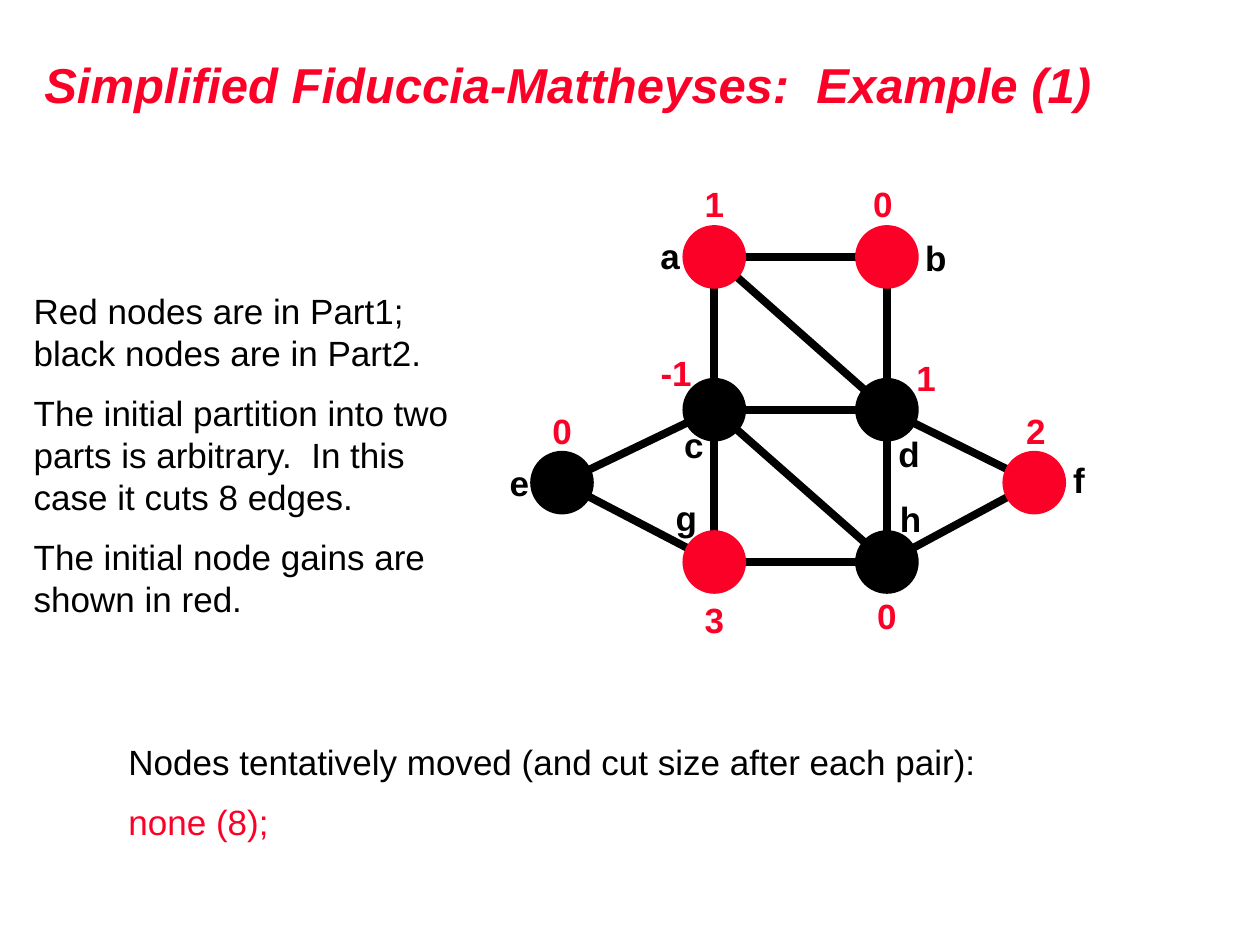
from math import hypot

from lxml.etree import SubElement
from pptx import Presentation
from pptx.dml.color import RGBColor
from pptx.enum.shapes import MSO_CONNECTOR, MSO_SHAPE
from pptx.enum.text import MSO_ANCHOR, MSO_AUTO_SIZE, PP_ALIGN
from pptx.oxml.ns import qn
from pptx.util import Cm, Pt

COLORS = {"red": "FC0128", "black": "000000"}
FONT = "Arial"
DIAMETER = 1.07
EDGE_GAP = 0.56
LABEL_WIDTH, LABEL_HEIGHT = 0.92, 1.09
EXTRA_CHARACTER_WIDTH = 0.25

NODES = {
    "a": ((4.4, 1.68), "red", (-0.89, -0.04), "1", (0, -1.08)),
    "b": ((7.88, 1.68), "red", (0.98, 0), "0", (-0.08, -1.08)),
    "c": ((4.4, 4.76), "black", (-0.41, 0.7), "-1", (-0.77, -0.75)),
    "d": ((7.88, 4.76), "black", (0.44, 0.88), "1", (0.79, -0.65)),
    "e": ((1.33, 6.23), "black", (-0.86, 0), "0", (0, -1.05)),
    "f": ((10.85, 6.23), "red", (0.9, -0.06), "2", (0.03, -1.05)),
    "g": ((4.4, 7.83), "red", (-0.57, -0.9), "3", (0, 1.16)),
    "h": ((7.88, 7.83), "black", (0.47, -0.88), "0", (0, 1.08)),
}
EDGES = ["ec", "hf", "eg", "gh", "cd", "ab", "df", "ac", "bd", "cg", "dh", "ch", "ad"]


def rgb(color):
    return RGBColor.from_string(COLORS[color])


def style(paragraph, size, color, bold=False, italic=False):
    for run in paragraph.runs:
        run.font.name = FONT
        run.font.size = Pt(size)
        run.font.bold = bold
        run.font.italic = italic
        run.font.color.rgb = rgb(color)


def add_heading(slide, box, text):
    heading = slide.shapes.title
    heading.left, heading.top, heading.width, heading.height = map(Cm, box)
    heading.text_frame.text = text
    heading.text_frame.vertical_anchor = MSO_ANCHOR.MIDDLE
    paragraph = heading.text_frame.paragraphs[0]
    paragraph.alignment = PP_ALIGN.LEFT
    style(paragraph, 28, "red", bold=True, italic=True)


def add_remarks(slide, box, remarks):
    frame = slide.shapes.add_textbox(*map(Cm, box)).text_frame
    frame.word_wrap = True
    for index, (text, color) in enumerate(remarks):
        paragraph = frame.add_paragraph() if index else frame.paragraphs[0]
        paragraph.text = text
        if index:
            paragraph.space_before = Pt(10)
        style(paragraph, 20, color)


def add_edge(slide, start, end):
    (x1, y1), (x2, y2) = start, end
    length = hypot(x2 - x1, y2 - y1)
    dx, dy = (x2 - x1) / length * EDGE_GAP, (y2 - y1) / length * EDGE_GAP
    edge = slide.shapes.add_connector(
        MSO_CONNECTOR.STRAIGHT, Cm(x1 + dx), Cm(y1 + dy), Cm(x2 - dx), Cm(y2 - dy))
    edge.line.color.rgb = rgb("black")
    edge.line.width = Pt(4.5)
    SubElement(edge._element.spPr, qn("a:effectLst"))


def add_node(slide, center, color):
    x, y = center
    node = slide.shapes.add_shape(
        MSO_SHAPE.OVAL, Cm(x - DIAMETER / 2), Cm(y - DIAMETER / 2),
        Cm(DIAMETER), Cm(DIAMETER))
    node.shadow.inherit = False
    node.fill.solid()
    node.fill.fore_color.rgb = rgb(color)
    node.line.color.rgb = rgb(color)
    node.line.width = Pt(6)


def add_label(slide, center, offset, text, color):
    width = LABEL_WIDTH + EXTRA_CHARACTER_WIDTH * (len(text) - 1)
    left = center[0] + offset[0] - width / 2
    top = center[1] + offset[1] - LABEL_HEIGHT / 2
    frame = slide.shapes.add_textbox(
        Cm(left), Cm(top), Cm(width), Cm(LABEL_HEIGHT)).text_frame
    frame.word_wrap = False
    frame.auto_size = MSO_AUTO_SIZE.SHAPE_TO_FIT_TEXT
    frame.text = text
    frame.paragraphs[0].alignment = PP_ALIGN.CENTER
    style(frame.paragraphs[0], 20, color, bold=True)


def add_graph(slide, left, top):
    centers = {name: (left + node[0][0], top + node[0][1])
               for name, node in NODES.items()}
    for start, end in EDGES:
        add_edge(slide, centers[start], centers[end])
    for name, node in NODES.items():
        add_node(slide, centers[name], node[1])
    for name, (_, _, letter_offset, gain, gain_offset) in NODES.items():
        add_label(slide, centers[name], letter_offset, name, "black")
        add_label(slide, centers[name], gain_offset, gain, "red")


def main():
    deck = Presentation()
    deck.slide_width, deck.slide_height = Cm(25.4), Cm(19.05)
    slide = deck.slides.add_slide(deck.slide_layouts[5])
    add_heading(slide, (0.64, 0.84, 23.5, 1.7),
                "Simplified Fiduccia-Mattheyses:  Example (1)")
    add_graph(slide, 10, 3.5)
    add_remarks(slide, (0.43, 5.72, 9.09, 7.04), [
        ("Red nodes are in Part1; black nodes are in Part2.", "black"),
        ("The initial partition into two parts is arbitrary.  "
         "In this case it cuts 8 edges.", "black"),
        ("The initial node gains are shown in red.", "black"),
    ])
    add_remarks(slide, (2.34, 14.81, 18.21, 2.36), [
        ("Nodes tentatively moved (and cut size after each pair):", "black"),
        ("none (8);", "red"),
    ])
    deck.save("out.pptx")


if __name__ == "__main__":
    main()
